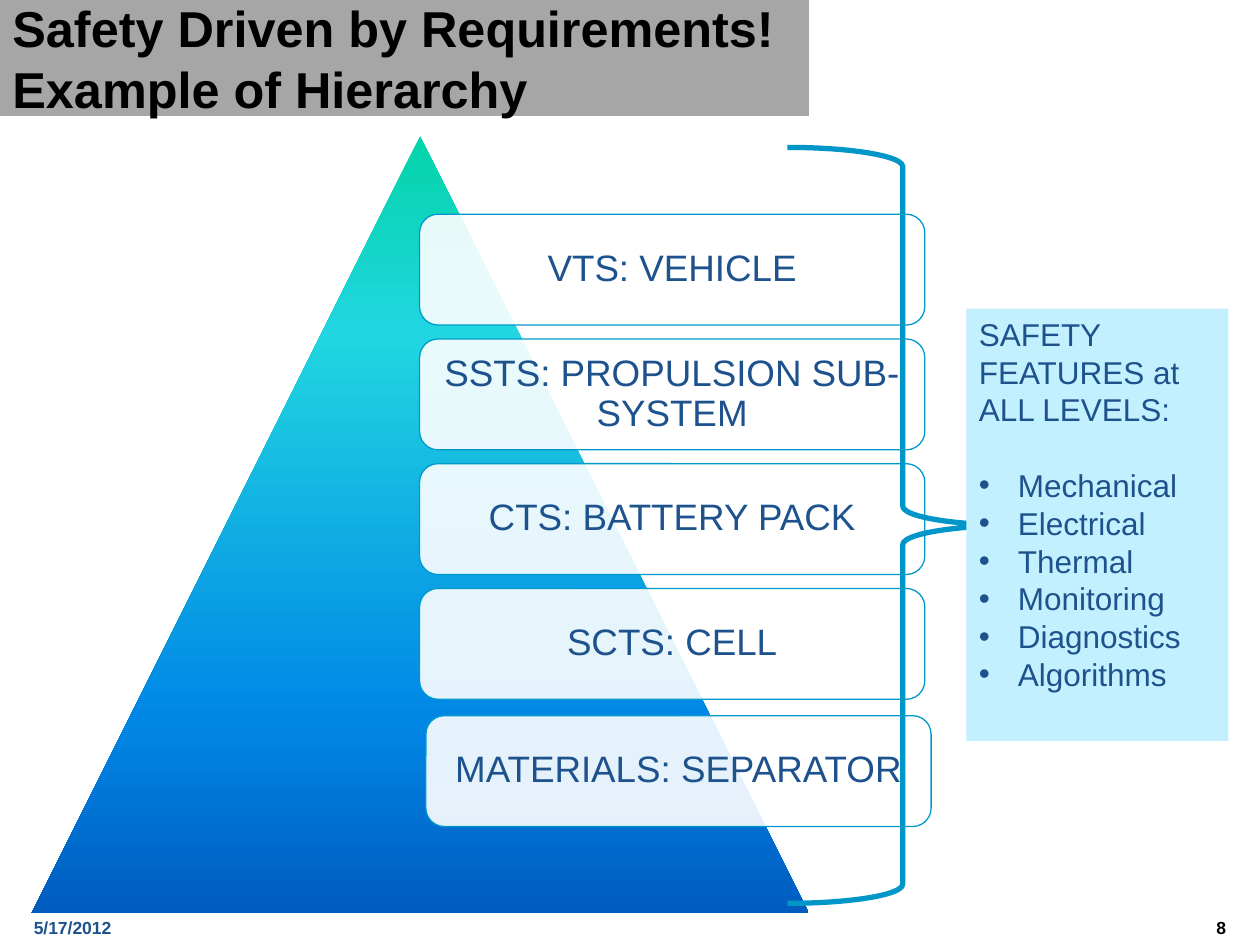
from lxml import etree
from pptx import Presentation
from pptx.dml.color import RGBColor
from pptx.enum.shapes import MSO_SHAPE
from pptx.enum.text import MSO_ANCHOR, PP_ALIGN
from pptx.oxml.ns import qn
from pptx.util import Inches, Pt

RECT = MSO_SHAPE.RECTANGLE
ROUND = MSO_SHAPE.ROUNDED_RECTANGLE
PEAK = MSO_SHAPE.ISOSCELES_TRIANGLE
BRACE = MSO_SHAPE.RIGHT_BRACE
TOP, MID = MSO_ANCHOR.TOP, MSO_ANCHOR.MIDDLE
LEFT, MAIN, RIGHT = PP_ALIGN.LEFT, PP_ALIGN.CENTER, PP_ALIGN.RIGHT

HUES = {
    "black": "000000", "white": "FFFFFF", "gray": "A6A6A6", "navy": "1D528D",
    "edge": "0099CC", "brace": "0096C8", "pale": "C2F0FF",
}
STOPS = [(0, "03D4A8"), (25, "21D6E0"), (75, "0087E6"), (100, "005CBF")]
LEVELS = ["VTS: VEHICLE", "SSTS: PROPULSION SUB-SYSTEM", "CTS: BATTERY PACK", "SCTS: CELL"]
SKILLS = ["Mechanical", "Electrical", "Thermal", "Monitoring", "Diagnostics", "Algorithms"]


def tint(name):
    return RGBColor.from_string(HUES[name])


class Deck:
    def __init__(self, slide, font):
        self.slide = slide
        self.font = font

    def shape(self, kind, box, fill=None, line=None, width=0.75):
        item = self.slide.shapes.add_shape(kind, *map(Inches, box))
        item.shadow.inherit = False
        if fill:
            item.fill.solid()
            item.fill.fore_color.rgb = tint(fill)
        else:
            item.fill.background()
        if line:
            item.line.color.rgb = tint(line)
            item.line.width = Pt(width)
        else:
            item.line.fill.background()
        return item

    def frame(self, item, anchor=TOP, inset=None):
        frame = item.text_frame
        frame.word_wrap = True
        frame.vertical_anchor = anchor
        if inset is not None:
            frame.margin_left = frame.margin_right = Inches(inset)
            frame.margin_top = frame.margin_bottom = Inches(inset)
        return frame

    def words(self, para, text, size, color="navy", bold=False, align=LEFT):
        para.alignment = align
        for i, part in enumerate(text.split("\n")):
            if i:
                para.add_line_break()
            run = para.add_run()
            run.text = part
            run.font.name = self.font
            run.font.size = Pt(size)
            run.font.bold = bold
            run.font.color.rgb = tint(color)

    def title(self, text, box):
        frame = self.frame(self.shape(RECT, box, "gray"), MID)
        self.words(frame.paragraphs[0], text, 28.8, "black", True)

    def foot(self, text, left, color, align):
        item = self.slide.shapes.add_textbox(*map(Inches, (left, 7.23, 2.33, 0.27)))
        self.words(self.frame(item).paragraphs[0], text, 10, color, True, align)

    def peak(self, box):
        item = self.shape(PEAK, box)
        item.fill.gradient()
        item.fill.gradient_angle = 270
        stops = item._element.spPr.find(qn("a:gradFill")).find(qn("a:gsLst"))
        for old in list(stops):
            stops.remove(old)
        for pos, color in STOPS:
            stop = etree.SubElement(stops, qn("a:gs"), pos=str(pos * 1000))
            etree.SubElement(stop, qn("a:srgbClr"), val=color)

    def level(self, text, left, top):
        item = self.shape(ROUND, (left, top, 4.01, 0.88), "white", "edge")
        color = item._element.spPr.find(qn("a:solidFill"))[0]
        etree.SubElement(color, qn("a:alpha"), val="90000")
        para = self.frame(item, MID, 0.09).paragraphs[0]
        para.line_spacing = 0.9
        self.words(para, text, 21, align=MAIN)

    def panel(self, head, items, box):
        frame = self.frame(self.shape(RECT, box, "pale"))
        self.words(frame.paragraphs[0], head, 18)
        for i, text in enumerate(items):
            para = frame.add_paragraph()
            props = para._p.get_or_add_pPr()
            props.set("marL", str(Inches(0.31)))
            props.set("indent", str(Inches(-0.31)))
            etree.SubElement(props, qn("a:buFont"), typeface=self.font)
            etree.SubElement(props, qn("a:buChar"), char="•")
            if i == 0:
                para.space_before = Pt(21.6)
            self.words(para, text, 18)


def main():
    show = Presentation()
    show.slide_width, show.slide_height = Inches(10), Inches(7.5)
    deck = Deck(show.slides.add_slide(show.slide_layouts[6]), "Arial")

    deck.title("Safety Driven by Requirements!\nExample of Hierarchy", (0, 0, 6.42, 0.92))
    deck.foot("5/17/2012", 0.17, "navy", LEFT)
    deck.foot("8", 7.5, "black", RIGHT)
    deck.peak((0.25, 1.08, 6.17, 6.17))
    for i, text in enumerate(LEVELS):
        deck.level(text, 3.33, 1.7 + 0.99 * i)
    deck.level("MATERIALS: SEPARATOR", 3.38, 5.68)
    deck.shape(BRACE, (6.25, 1.17, 1.83, 6), line="brace", width=3)
    deck.panel("SAFETY FEATURES at ALL LEVELS:", SKILLS, (7.67, 2.45, 2.08, 3.43))

    show.save("out.pptx")


if __name__ == "__main__":
    main()
